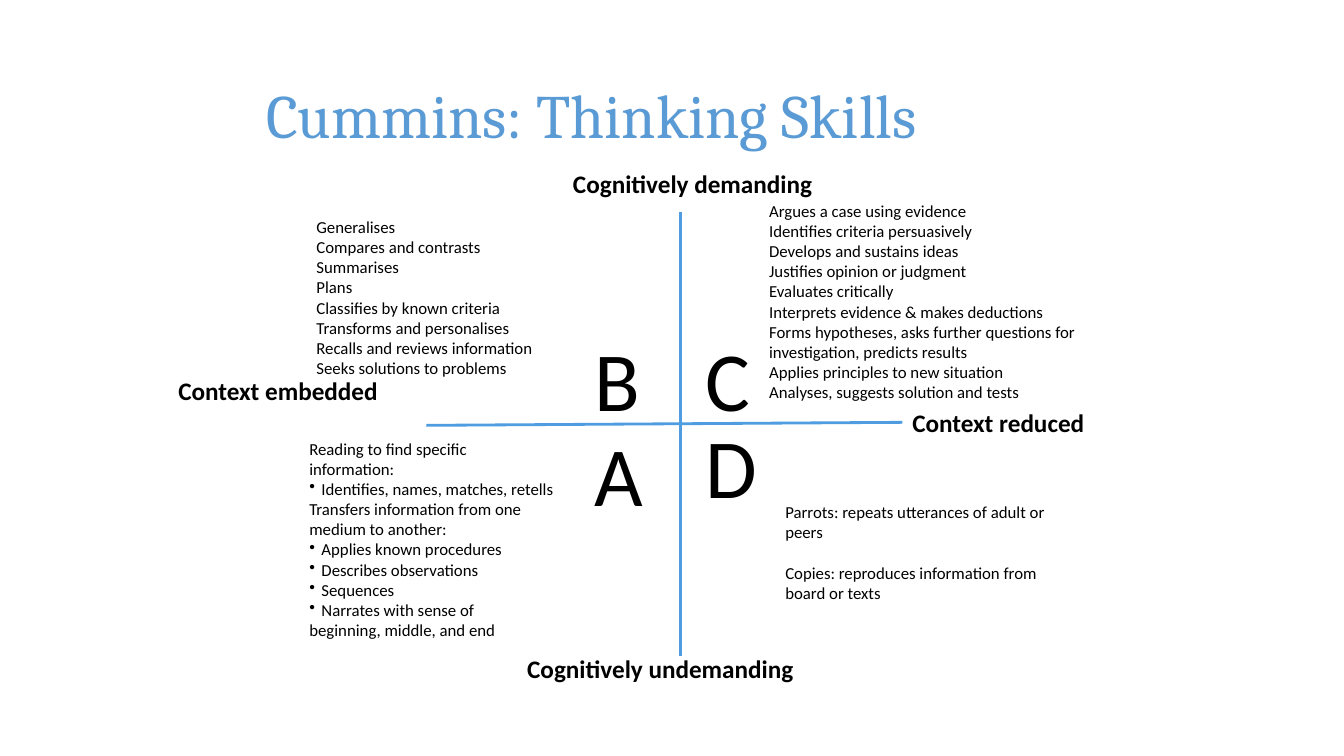
from dataclasses import dataclass

from lxml.etree import SubElement
from pptx import Presentation
from pptx.dml.color import RGBColor
from pptx.enum.shapes import MSO_CONNECTOR as Conn
from pptx.enum.text import MSO_ANCHOR as Anchor, PP_ALIGN as Align
from pptx.oxml.ns import qn
from pptx.shapes.autoshape import Shape
from pptx.shapes.connector import Connector
from pptx.slide import Slide
from pptx.util import Inches, Pt

BLACK = RGBColor(0x00, 0x00, 0x00)
TITLE = RGBColor(0x5B, 0x9B, 0xD5)
AXIS = RGBColor(0x4F, 0x9C, 0xE1)
BULLET = "• "
INDENT = Inches(0.12)


@dataclass(frozen=True)
class Box:
    left: float
    top: float
    width: float
    height: float


@dataclass(frozen=True)
class Skills:
    box: Box
    lines: tuple[str, ...]
    gap: float = 0


LETTER_LEFT, LETTER_RIGHT = 5.8, 6.9
LETTERS = {
    "B": Box(LETTER_LEFT, 3.2, 1.26, 1.11),
    "C": Box(LETTER_RIGHT, 3.2, 1.26, 1.11),
    "A": Box(LETTER_LEFT, 4.14, 1.26, 1.11),
    "D": Box(LETTER_RIGHT, 4.06, 1.26, 1.11),
}

POLES = {
    "Cognitively demanding": Box(2.34, 1.62, 9.06, 0.4),
    "Cognitively undemanding": Box(2.02, 6.43, 9.06, 0.4),
}
SIDES = {
    "Context embedded": Box(1.67, 3.67, 2.36, 0.4),
    "Context reduced": Box(8.95, 3.99, 2.36, 0.4),
}

QUADRANTS = (
    Skills(Box(3.04, 2.1, 2.83, 1.72), (
        "Generalises",
        "Compares and contrasts",
        "Summarises",
        "Plans",
        "Classifies by known criteria",
        "Transforms and personalises",
        "Recalls and reviews information",
        "Seeks solutions to problems",
    )),
    Skills(Box(7.53, 1.94, 3.62, 2.12), (
        "Argues a case using evidence",
        "Identifies criteria persuasively",
        "Develops and sustains ideas",
        "Justifies opinion or judgment",
        "Evaluates critically",
        "Interprets evidence & makes deductions",
        "Forms hypotheses, asks further questions for investigation, predicts results",
        "Applies principles to new situation",
        "Analyses, suggests solution and tests",
    )),
    Skills(Box(2.97, 4.3, 2.83, 2.32), (
        "Reading to find specific",
        "information:",
        "• Identifies, names, matches, retells",
        "Transfers information from one",
        "medium to another:",
        "• Applies known procedures",
        "• Describes observations",
        "• Sequences",
        "• Narrates with sense of",
        "beginning, middle, and end",
    )),
    Skills(Box(7.69, 4.93, 2.83, 1.11), (
        "Parrots: repeats utterances of adult or peers",
        "Copies: reproduces information from board or texts",
    ), gap=14.5),
)


def add_text(slide: Slide, box: Box, *lines: str, size: float,
             font: str = "Calibri", color: RGBColor = BLACK,
             bold: bool = False, align: Align = Align.LEFT,
             anchor: Anchor = Anchor.TOP, gap: float = 0) -> Shape:
    """Add one paragraph per line; a leading bullet sign makes a list item."""
    shape = slide.shapes.add_textbox(
        Inches(box.left), Inches(box.top), Inches(box.width), Inches(box.height))
    frame = shape.text_frame
    frame.word_wrap = True
    frame.vertical_anchor = anchor
    for i, line in enumerate(lines):
        para = frame.add_paragraph() if i else frame.paragraphs[0]
        para.alignment = align
        if i and gap:
            para.space_before = Pt(gap)
        if line.startswith(BULLET):
            props = para._p.get_or_add_pPr()
            props.set("marL", str(INDENT))
            props.set("indent", str(-INDENT))
            SubElement(props, qn("a:buChar")).set("char", BULLET.strip())
        run = para.add_run()
        run.text = line.removeprefix(BULLET)
        run.font.name = font
        run.font.size = Pt(size)
        run.font.bold = bold
        run.font.color.rgb = color
    return shape


def add_axis(slide: Slide, x1: float, y1: float, x2: float, y2: float) -> Connector:
    axis = slide.shapes.add_connector(
        Conn.STRAIGHT, Inches(x1), Inches(y1), Inches(x2), Inches(y2))
    axis.line.color.rgb = AXIS
    axis.line.width = Pt(2)
    SubElement(axis._element.spPr, qn("a:effectLst"))
    return axis


def main() -> None:
    deck = Presentation()
    deck.slide_width, deck.slide_height = Inches(13.33), Inches(7.5)
    slide = deck.slides.add_slide(deck.slide_layouts[6])

    add_text(slide, Box(2.54, 0.4, 9.88, 1.45), "Cummins: Thinking Skills",
             size=44, font="Cambria", color=TITLE, anchor=Anchor.MIDDLE)
    add_axis(slide, 6.75, 2.1, 6.75, 6.51)
    context = add_axis(slide, 4.23, 4.22, 8.95, 4.19)

    for letter, box in LETTERS.items():
        add_text(slide, box, letter, size=60)
    for label, box in POLES.items():
        add_text(slide, box, label, size=18, bold=True, align=Align.CENTER)
    sides = {label: add_text(slide, box, label, size=18, bold=True)
             for label, box in SIDES.items()}
    context.end_connect(sides["Context reduced"], 1)
    for quad in QUADRANTS:
        add_text(slide, quad.box, *quad.lines, size=12, gap=quad.gap)

    deck.save("out.pptx")


if __name__ == "__main__":
    main()
